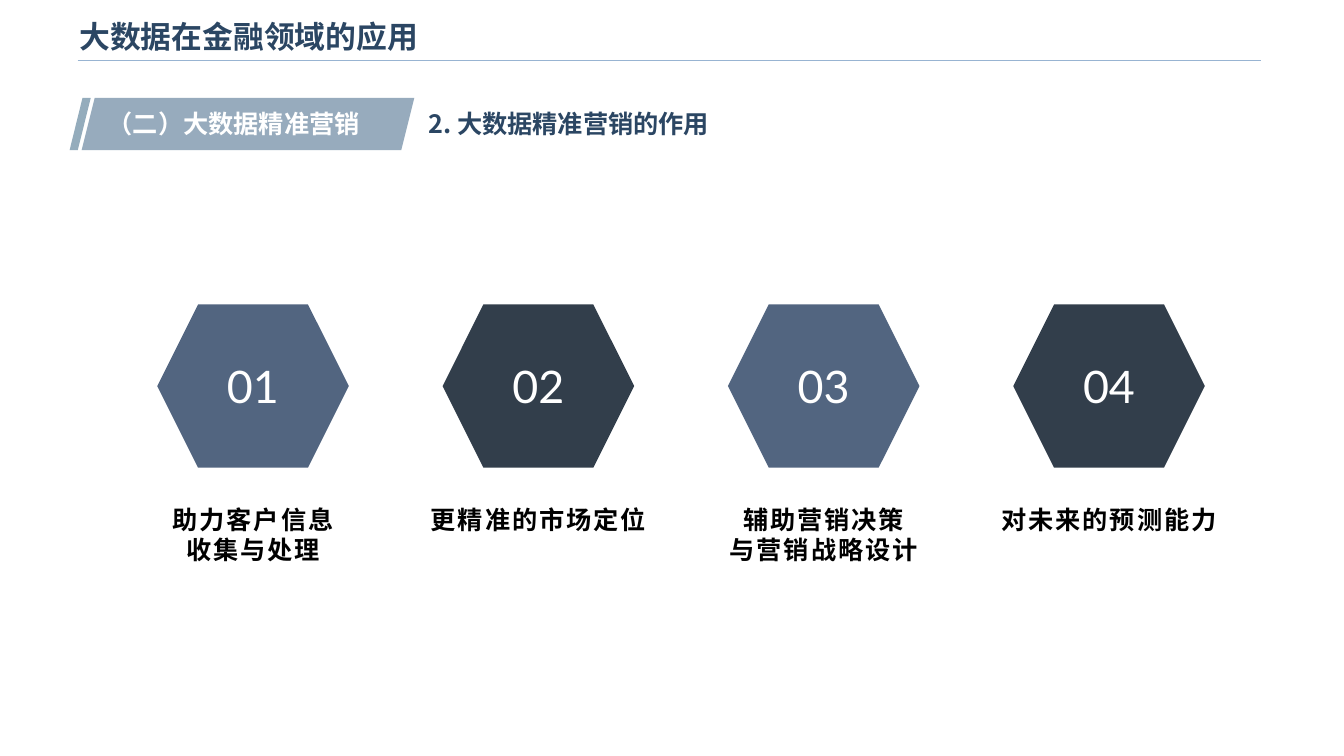
from lxml import etree
from pptx import Presentation
from pptx import util as u
from pptx.dml.color import RGBColor
from pptx.enum import shapes, text
from pptx.oxml.ns import qn

COLORS = {
    "navy": "2B4663", "rule": "98B4D2", "stripe": "94ACBC", "banner": "97ABBD",
    "blue": "526580", "slate": "323E4B", "white": "FFFFFF", "black": "000000",
}
CJK = "Noto Sans CJK SC"
ROLES = ["助力客户信息\n收集与处理", "更精准的市场定位",
         "辅助营销决策\n与营销战略设计", "对未来的预测能力"]
FIRST_LEFT, STEP = 1.56, 2.83
HEX_WIDTH, LABEL_WIDTH = 1.9, 2.79


def rgb(name):
    return RGBColor.from_string(COLORS[name])


def write(sp, words, size, color, font=CJK, bold=True, align=text.PP_ALIGN.LEFT,
          anchor=text.MSO_ANCHOR.TOP, spacing=0):
    """Fill a shape with text; spacing is the letter spacing in points."""
    tf = sp.text_frame
    tf.word_wrap = True
    tf.vertical_anchor = anchor
    tf.text = words
    for p in tf.paragraphs:
        p.alignment = align
        for r in p.runs:
            r.font.name = font
            r.font.size = u.Pt(size)
            r.font.bold = bold
            r.font.color.rgb = rgb(color)
            rpr = r.font._element
            etree.SubElement(rpr, qn("a:ea")).set("typeface", CJK)
            if spacing:
                rpr.set("spc", str(round(spacing * 100)))


def add_text(s, left, top, width, height, words, size, color, **style):
    sp = s.shapes.add_textbox(*map(u.Inches, (left, top, width, height)))
    write(sp, words, size, color, **style)


def add_block(s, kind, left, top, width, height, color):
    sp = s.shapes.add_shape(kind, *map(u.Inches, (left, top, width, height)))
    sp.shadow.inherit = False
    sp.fill.solid()
    sp.fill.fore_color.rgb = rgb(color)
    sp.line.fill.background()
    return sp


def add_rule(s, left, right, y):
    line = s.shapes.add_connector(shapes.MSO_CONNECTOR.STRAIGHT,
                                  *map(u.Inches, (left, y, right, y)))
    line.line.color.rgb = rgb("rule")
    line.line.width = u.Pt(1)
    etree.SubElement(line._element.spPr, qn("a:effectLst"))


def add_banner(s):
    for left, width, slant, color in [(0.69, 0.21, 0.613, "stripe"),
                                      (0.81, 3.3, 0.25, "banner")]:
        sp = add_block(s, shapes.MSO_SHAPE.PARALLELOGRAM,
                       left, 0.97, width, 0.52, color)
        sp.adjustments[0] = slant
    add_text(s, 0.97, 1.03, 2.92, 0.4, "（二）大数据精准营销", 18, "white")


def add_role(s, index, words):
    left = FIRST_LEFT + index * STEP
    sp = add_block(s, shapes.MSO_SHAPE.HEXAGON, left, 3.02, HEX_WIDTH, 1.62,
                   ("blue", "slate")[index % 2])
    write(sp, f"{index + 1:02}", 32, "white", font="Lato", bold=False,
          align=text.PP_ALIGN.CENTER, anchor=text.MSO_ANCHOR.MIDDLE)
    add_text(s, left - (LABEL_WIDTH - HEX_WIDTH) / 2, 4.95, LABEL_WIDTH, 1.34,
             words, 18, "black", font="Arial", align=text.PP_ALIGN.CENTER,
             spacing=1.4)


def main():
    prs = Presentation()
    prs.slide_width, prs.slide_height = u.Inches(13.33), u.Inches(7.5)
    s = prs.slides.add_slide(prs.slide_layouts[6])
    add_rule(s, 0.77, 12.51, 0.6)
    add_text(s, 0.69, 0.09, 10.71, 0.53, "大数据在金融领域的应用", 22, "navy",
             font="Arial", anchor=text.MSO_ANCHOR.MIDDLE)
    add_banner(s)
    add_text(s, 4.15, 1.03, 3.8, 0.4, "2. 大数据精准营销的作用", 18, "navy")
    for index, words in enumerate(ROLES):
        add_role(s, index, words)
    prs.save("out.pptx")


if __name__ == "__main__":
    main()
